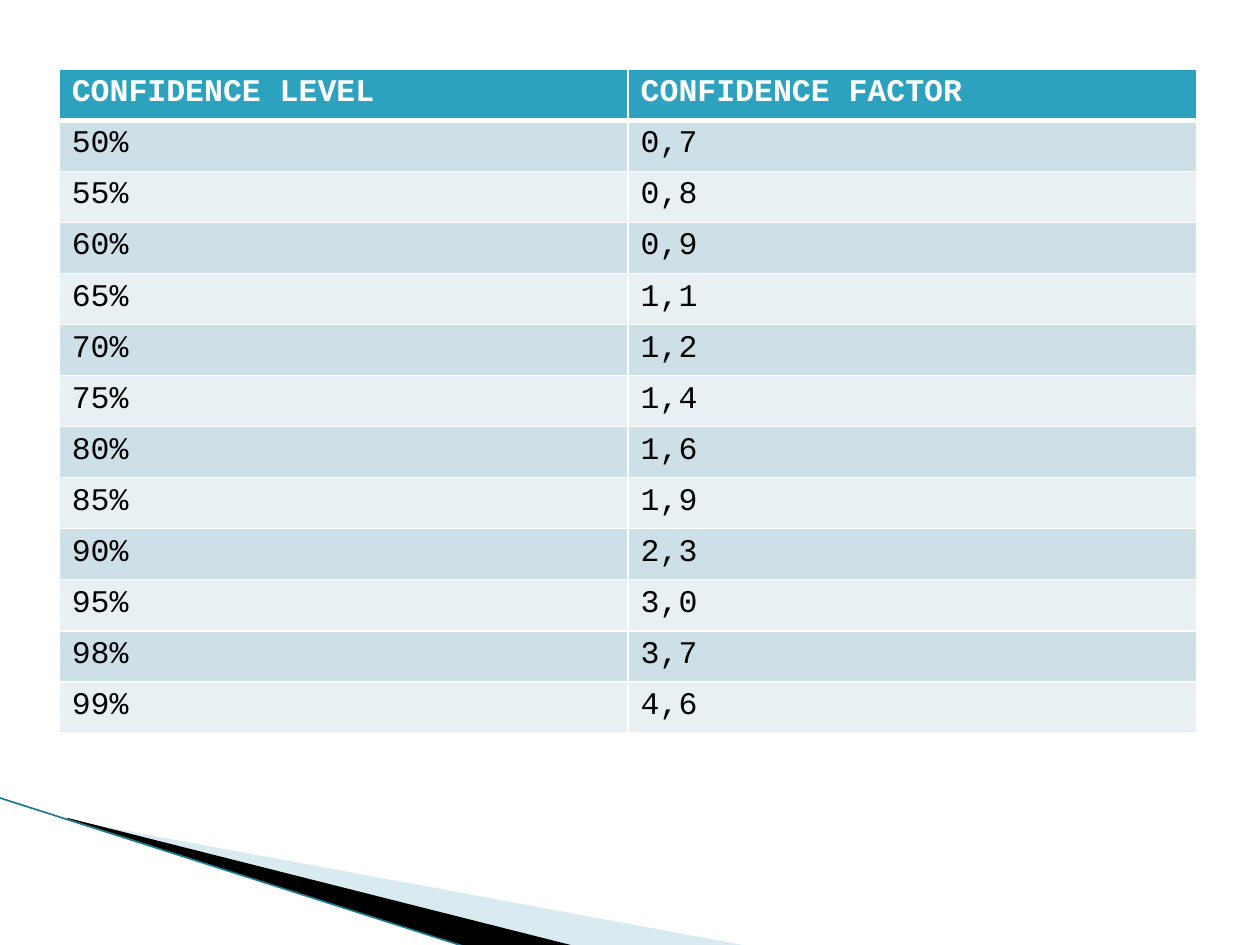
from lxml import etree
from pptx import Presentation
from pptx import util as u
from pptx.dml.color import RGBColor
from pptx.enum import shapes
from pptx.oxml.ns import qn


def color(value):
    return RGBColor.from_string(value)


def add_border(cell, side, width):
    properties = cell._tc.get_or_add_tcPr()
    line = etree.SubElement(properties, qn(f"a:ln{side}"), w=str(u.Pt(width)))
    fill = etree.SubElement(line, qn("a:solidFill"))
    etree.SubElement(fill, qn("a:srgbClr"), val="FFFFFF")


presentation = Presentation()
presentation.slide_width = u.Inches(10)
presentation.slide_height = u.Inches(7.5)
slide = presentation.slides.add_slide(presentation.slide_layouts[6])

wedges = [
    ("A0CBDC", 40, (0.78, 5.47, 4.16, 1.58),
     [(0.55, 6.51), (5.95, 7.51), (4.56, 7.51), (0.55, 6.5)]),
    ("000000", 100, (-0.06, 6.33, 4.16, 0.92),
     [(0.53, 6.49), (4.57, 7.51), (3.72, 7.52), (0.54, 6.5)]),
]
for fill_color, opacity, frame, points in wedges:
    corners = [(u.Inches(x), u.Inches(y)) for x, y in points]
    builder = slide.shapes.build_freeform(*corners[0])
    builder.add_line_segments(corners[1:], close=True)
    wedge = builder.convert_to_shape()
    wedge.shadow.inherit = False
    wedge.fill.solid()
    wedge.fill.fore_color.rgb = color(fill_color)
    wedge.line.fill.background()
    if opacity < 100:
        tint = wedge._element.spPr.find(f".//{qn('a:srgbClr')}")
        etree.SubElement(tint, qn("a:alpha"), val=str(opacity * 1000))

    left, top, width, height = [u.Inches(length) for length in frame]
    outline = wedge._element.spPr.find(f".//{qn('a:path')}")
    outline.set("w", str(width))
    outline.set("h", str(height))
    for point, (x, y) in zip(outline.iter(qn("a:pt")), corners):
        point.set("x", str(x - left))
        point.set("y", str(y - top))
    wedge.left, wedge.top, wedge.width, wedge.height = left, top, width, height

edge = slide.shapes.add_connector(
    shapes.MSO_CONNECTOR.STRAIGHT,
    u.Inches(-0.01), u.Inches(6.33), u.Inches(3.71), u.Inches(7.52),
)
edge.line.color.rgb = color("1B7A90")
edge.line.width = u.Pt(0.95)
etree.SubElement(edge._element.spPr, qn("a:effectLst"))

rows = [
    ("CONFIDENCE LEVEL", "CONFIDENCE FACTOR"),
    ("50%", "0,7"),
    ("55%", "0,8"),
    ("60%", "0,9"),
    ("65%", "1,1"),
    ("70%", "1,2"),
    ("75%", "1,4"),
    ("80%", "1,6"),
    ("85%", "1,9"),
    ("90%", "2,3"),
    ("95%", "3,0"),
    ("98%", "3,7"),
    ("99%", "4,6"),
]
table = slide.shapes.add_table(
    len(rows), 2, u.Inches(0.47), u.Inches(0.55), u.Inches(9.03), u.Inches(5.27)
).table

for row_index, values in enumerate(rows):
    header = row_index == 0
    band = "CDE0E8" if row_index % 2 else "E8F0F4"
    for column_index, value in enumerate(values):
        cell = table.cell(row_index, column_index)
        for side in "LRTB":
            add_border(cell, side, 3 if header and side == "B" else 1)
        cell.fill.solid()
        cell.fill.fore_color.rgb = color("2DA2BF" if header else band)
        run = cell.text_frame.paragraphs[0].add_run()
        run.text = value
        run.font.name = "Courier New"
        run.font.size = u.Pt(18)
        run.font.bold = header
        run.font.color.rgb = color("FFFFFF" if header else "000000")

presentation.save("out.pptx")
